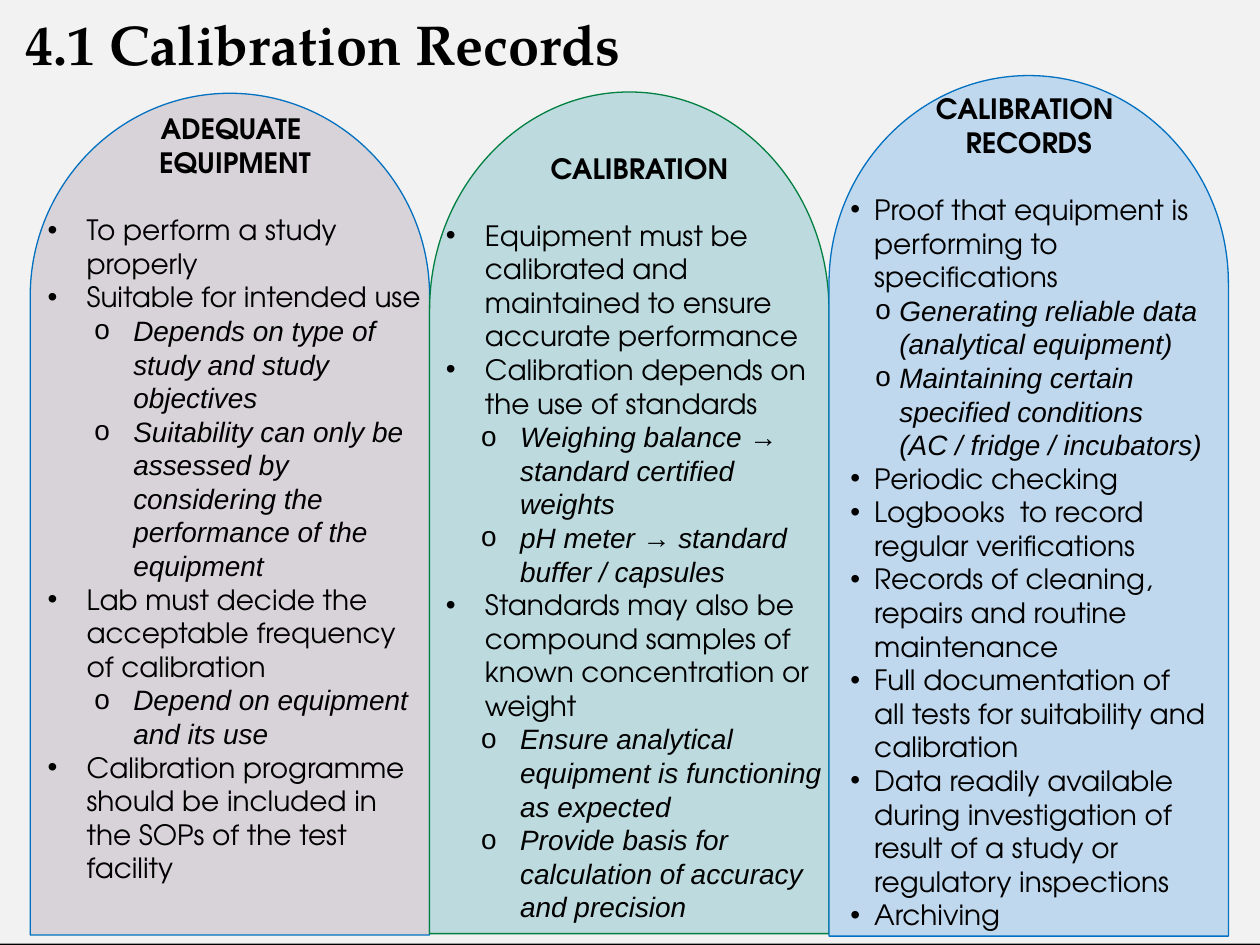
"""Build the calibration records slide with three arched columns."""
from lxml import etree
from pptx import Presentation
from pptx import util as u
from pptx.dml.color import RGBColor
from pptx.enum import shapes, text
from pptx.oxml.ns import qn

COLORS = {
    "back": "000000", "panel": "F2F2F2", "ink": "000000",
    "mauve": "D8D3D9", "teal": "BDDADF", "sky": "C0D8ED",
    "blue": "0070C0", "green": "008040",
}
TITLE_FONT, MAIN_FONT, SUB_FONT = "TeX Gyre Pagella", "TeX Gyre Adventor", "Arial"
LINE_PITCH = 19.2
ARCH_LEFT, ARCH_WIDTH = 0.24, 3.17
ROUNDNESS = 0.55

COLUMNS = [
    {
        "arch": {"top": 0.74, "rise": 1.61, "bottom": 7.42, "fill": "mauve", "line": "blue"},
        "box": (0.28, 0.84, 3.17, 6.56), "indents": (0.31, 0.68), "hang": 0.31,
        "heading": ["ADEQUATE ", "EQUIPMENT"], "heading_indent": 0,
        "items": [
            (0, "To perform a study properly"),
            (0, "Suitable for intended use"),
            (1, "Depends on type of study and study objectives"),
            (1, "Suitability can only be assessed by considering the performance of the equipment"),
            (0, "Lab must decide the acceptable frequency of calibration"),
            (1, "Depend on equipment and its use"),
            (0, "Calibration programme should be included in the SOPs of the test facility"),
        ],
    },
    {
        "arch": {"top": 0.73, "rise": 1.73, "bottom": 7.41, "fill": "teal", "line": "green"},
        "box": (3.44, 1.15, 3.27, 6.29), "indents": (0.31, 0.59), "hang": 0.31,
        "heading": ["CALIBRATION"], "heading_indent": 0,
        "items": [
            (0, "Equipment must be calibrated and maintained to ensure accurate performance"),
            (0, "Calibration depends on the use of standards"),
            (1, "Weighing balance → standard certified weights"),
            (1, "pH meter → standard buffer / capsules"),
            (0, "Standards may also be compound samples of known concentration or weight"),
            (1, "Ensure analytical equipment is functioning as expected"),
            (1, "Provide basis for calculation of accuracy and precision"),
        ],
    },
    {
        "arch": {"top": 0.6, "rise": 1.65, "bottom": 7.43, "fill": "sky", "line": "blue"},
        "box": (6.55, 0.68, 3.13, 6.83), "indents": (0.29, 0.49), "hang": 0.19,
        "heading": ["CALIBRATION ", "RECORDS"], "heading_indent": 0.1,
        "items": [
            (0, "Proof that equipment is performing to specifications"),
            (1, "Generating reliable data (analytical equipment)"),
            (1, "Maintaining certain specified conditions (AC / fridge / incubators)"),
            (0, "Periodic checking"),
            (0, "Logbooks  to record regular verifications"),
            (0, "Records of cleaning, repairs and routine maintenance"),
            (0, "Full documentation of all tests for suitability and calibration"),
            (0, "Data readily available during investigation of result of a study "
                "or regulatory inspections"),
            (0, "Archiving"),
        ],
    },
]


def color(name):
    """Return the named colour."""
    return RGBColor.from_string(COLORS[name])


def paint(shape, fill, line=None):
    """Fill and outline a shape without a shadow."""
    shape.shadow.inherit = False
    shape.fill.solid()
    shape.fill.fore_color.rgb = color(fill)
    if line:
        shape.line.color.rgb = color(line)
        shape.line.width = u.Pt(0.75)
    else:
        shape.line.fill.background()


def bend(segment, controls):
    """Turn a straight outline segment into a curve with the given control points."""
    segment.tag = qn("a:cubicBezTo")
    for index, (x, y) in enumerate(controls):
        point = etree.Element(qn("a:pt"), x=str(int(x)), y=str(int(y)))
        segment.insert(index, point)


def add_arch(page, left, top, rise, bottom, fill, line):
    """Draw a column with a half-elliptical top."""
    x, y, width, height, rise = map(
        u.Inches, (left, top, ARCH_WIDTH, bottom - top, rise))
    middle = width // 2
    builder = page.shapes.build_freeform(x + middle, y)
    builder.add_line_segments([
        (x, y + rise), (x, y + height), (x + width, y + height),
        (x + width, y + rise), (x + middle, y)], close=True)
    arch = builder.convert_to_shape()
    segments = list(arch._element.iter(qn("a:lnTo")))
    reach, shoulder = middle * ROUNDNESS, rise * (1 - ROUNDNESS)
    bend(segments[0], [(middle - reach, 0), (0, shoulder)])
    bend(segments[-1], [(width, shoulder), (middle + reach, 0)])
    paint(arch, fill, line)


def add_box(page, place, anchor=text.MSO_ANCHOR.TOP):
    """Add a wrapping text box and return its text frame."""
    frame = page.shapes.add_textbox(*map(u.Inches, place)).text_frame
    frame.word_wrap = True
    frame.vertical_anchor = anchor
    return frame


def set_indent(para, indent, hang=0, bullet=None):
    """Set the paragraph margins and optional bullet character."""
    props = para._p.get_or_add_pPr()
    props.set("marL", str(u.Inches(indent)))
    props.set("indent", str(-u.Inches(hang)))
    if bullet:
        etree.SubElement(props, qn("a:buFont"), typeface=SUB_FONT)
        etree.SubElement(props, qn("a:buChar"), char=bullet)


def write(frame, words, size=16, font=MAIN_FONT, bold=False, italic=False,
          align=text.PP_ALIGN.LEFT, pitch=LINE_PITCH, after=0):
    """Write one formatted paragraph and return it."""
    para = frame.paragraphs[0]
    if para.runs:
        para = frame.add_paragraph()
    para.alignment = align
    para.space_after = u.Pt(after)
    if pitch:
        para.line_spacing = u.Pt(pitch)
    span = para.add_run()
    span.text = words
    span.font.size, span.font.name = u.Pt(size), font
    span.font.bold, span.font.italic = bold, italic
    span.font.color.rgb = color("ink")
    return para


def add_column_text(page, column):
    """Write a column heading and its two-level list."""
    frame = add_box(page, column["box"])
    heading = column["heading"]
    for words in heading:
        para = write(frame, words, bold=True, align=text.PP_ALIGN.CENTER,
                     after=LINE_PITCH if words == heading[-1] else 0)
        set_indent(para, column["heading_indent"])
    for level, words in column["items"]:
        para = write(frame, words, font=(MAIN_FONT, SUB_FONT)[level], italic=level == 1)
        set_indent(para, column["indents"][level], column["hang"], "•o"[level])


def main():
    """Build and save the deck."""
    deck = Presentation()
    deck.slide_width, deck.slide_height = u.Inches(10), u.Inches(7.5)
    page = deck.slides.add_slide(deck.slide_layouts[6])
    page.background.fill.solid()
    page.background.fill.fore_color.rgb = color("back")
    panel = page.shapes.add_shape(shapes.MSO_SHAPE.RECTANGLE, 0, u.Inches(-0.01),
                                  u.Inches(10), u.Inches(7.5))
    paint(panel, "panel")
    title = add_box(page, (0.1, 0.01, 8.25, 0.66), text.MSO_ANCHOR.MIDDLE)
    write(title, "4.1 Calibration Records", size=32, font=TITLE_FONT, bold=True, pitch=None)
    for index, column in enumerate(COLUMNS):
        add_arch(page, ARCH_LEFT + index * ARCH_WIDTH, **column["arch"])
    for column in COLUMNS:
        add_column_text(page, column)
    deck.save("out.pptx")


if __name__ == "__main__":
    main()
